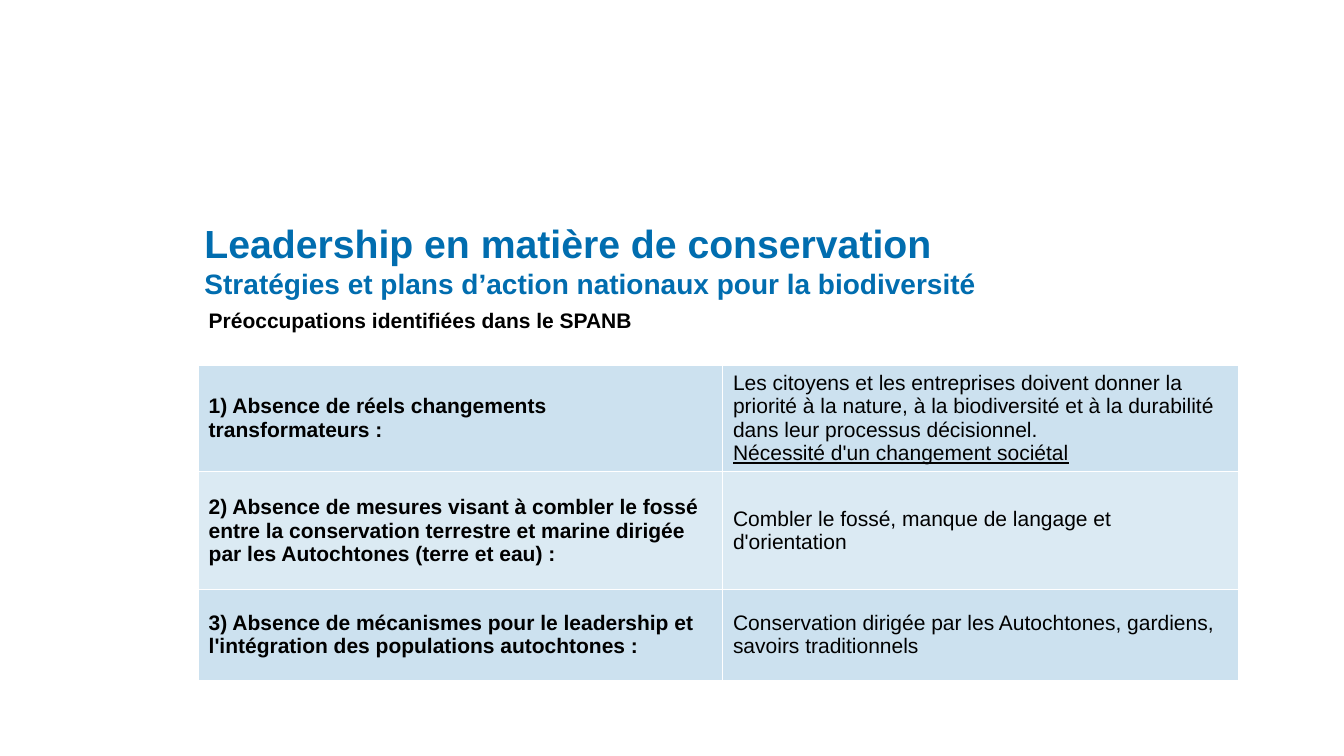
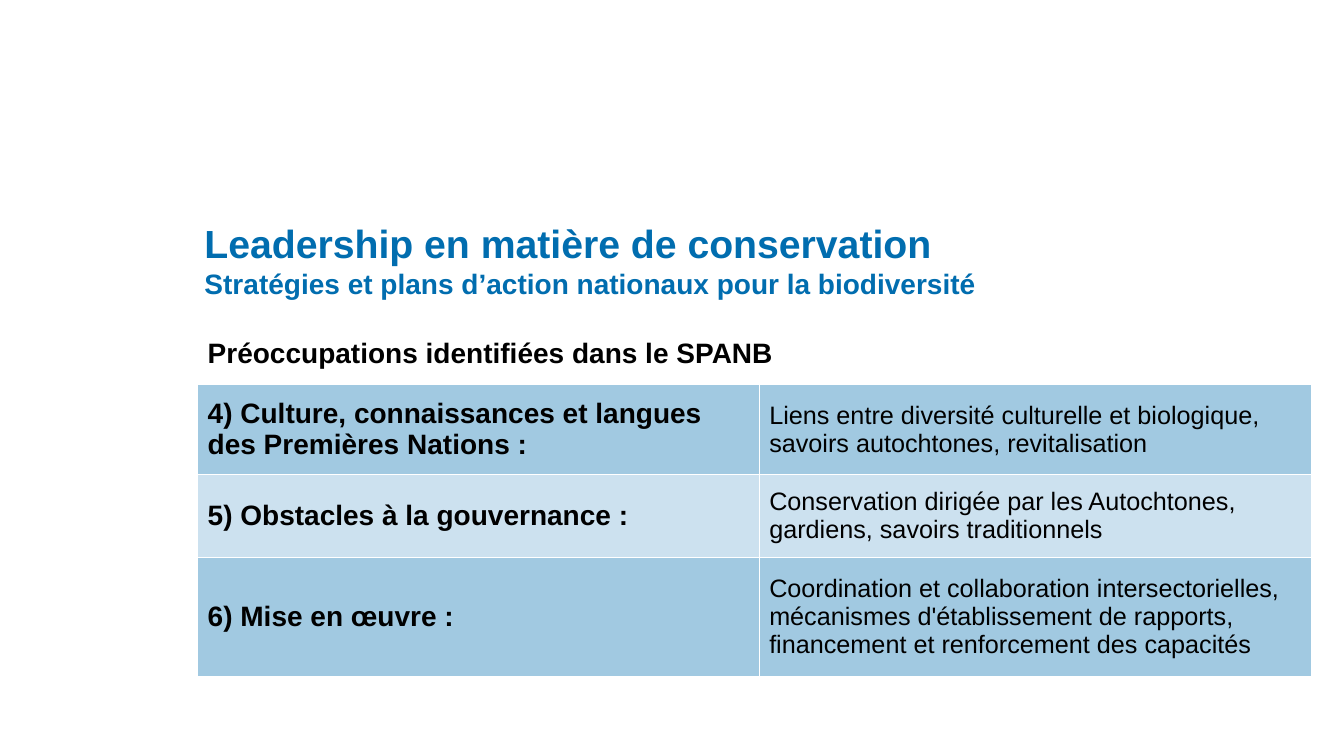
from lxml import etree
from pptx import Presentation
from pptx.dml.color import RGBColor
from pptx.enum import text
from pptx.oxml.ns import qn
from pptx.util import Inches, Pt

FONT = "Arial"
COLOURS = {"blue": "016DAF", "text": "000000", "border": "FFFFFF"}
THIN, THICK = 0.77, 2.33

# Content
TITLE = "Leadership en matière de conservation"
SUBTITLE = "Stratégies et plans d’action nationaux pour la biodiversité"
HEADING = "Préoccupations identifiées dans le SPANB"

# Tints are opacities of the blue, in percent, for odd and even rows
SLIDES = [
    {
        "left": 1.97, "top": 3.02,
        "columns": [5.2, 5.11], "rows": [0.6, 1.06, 1.17, 0.9],
        "concern_size": 15, "response_size": 15, "tints": (20, 14),
        "concerns": [
            ("1) Absence de réels changements transformateurs :",
             ["Les citoyens et les entreprises doivent donner la priorité à la nature, "
              "à la biodiversité et à la durabilité dans leur processus décisionnel.",
              "Nécessité d'un changement sociétal"]),
            ("2) Absence de mesures visant à combler le fossé entre la conservation "
             "terrestre et marine dirigée par les Autochtones (terre et eau) :",
             ["Combler le fossé, manque de langage et d'orientation"]),
            ("3) Absence de mécanismes pour le leadership et l'intégration des "
             "populations autochtones :",
             ["Conservation dirigée par les Autochtones, gardiens, savoirs traditionnels"]),
        ],
    },
    {
        "left": 1.96, "top": 3.3,
        "columns": [5.57, 5.48], "rows": [0.51, 0.9, 0.82, 1.18],
        "concern_size": 20, "response_size": 18, "tints": (37, 20),
        "concerns": [
            ("4) Culture, connaissances et langues des Premières Nations :",
             ["Liens entre diversité culturelle et biologique, savoirs autochtones, "
              "revitalisation"]),
            ("5) Obstacles à la gouvernance :",
             ["Conservation dirigée par les Autochtones, gardiens, savoirs traditionnels"]),
            ("6) Mise en œuvre :",
             ["Coordination et collaboration intersectorielles, mécanismes "
              "d'établissement de rapports, financement et renforcement des capacités"]),
        ],
    },
]


def format_run(run, size, colour, bold):
    run.font.name = FONT
    run.font.size = Pt(size)
    run.font.bold = bold
    run.font.color.rgb = RGBColor.from_string(COLOURS[colour])


def add_title(slide):
    title = slide.shapes.add_textbox(Inches(1.93), Inches(1.85), Inches(11.5), Inches(1.45))
    frame = title.text_frame
    frame.word_wrap = True
    frame.vertical_anchor = text.MSO_ANCHOR.MIDDLE
    frame.text = f"{TITLE}\v{SUBTITLE}"
    for run, size in zip(frame.paragraphs[0].runs, (28, 20)):
        format_run(run, size, "blue", True)


def set_borders(cell, row):
    """White grid, thicker between the heading and the first concern."""
    widths = {"lnL": THIN, "lnR": THIN,
              "lnT": THICK if row == 1 else THIN,
              "lnB": THICK if row == 0 else THIN}
    properties = cell._tc.get_or_add_tcPr()
    for side, width in widths.items():
        line = etree.SubElement(properties, qn(f"a:{side}"), w=str(int(Pt(width))))
        fill = etree.SubElement(line, qn("a:solidFill"))
        etree.SubElement(fill, qn("a:srgbClr"), val=COLOURS["border"])


def set_tint(cell, percent):
    cell.fill.solid()
    cell.fill.fore_color.rgb = RGBColor.from_string(COLOURS["blue"])
    colour = cell._tc.tcPr.find(qn("a:solidFill")).find(qn("a:srgbClr"))
    etree.SubElement(colour, qn("a:alpha"), val=str(percent * 1000))


def write_cell(cell, lines, size, bold):
    cell.text_frame.text = "\n".join(lines)
    for paragraph in cell.text_frame.paragraphs:
        for run in paragraph.runs:
            format_run(run, size, "text", bold)


def add_concerns(slide, content):
    columns, rows = content["columns"], content["rows"]
    table = slide.shapes.add_table(
        len(rows), len(columns), Inches(content["left"]), Inches(content["top"]),
        Inches(sum(columns)), Inches(sum(rows))).table
    table.first_row = table.horz_banding = False
    for column, width in zip(table.columns, columns):
        column.width = Inches(width)
    for row, height in zip(table.rows, rows):
        row.height = Inches(height)

    # Grid and fills
    for r in range(len(rows)):
        for c in range(len(columns)):
            cell = table.cell(r, c)
            set_borders(cell, r)
            if r == 0:
                cell.fill.background()
            else:
                cell.vertical_anchor = text.MSO_ANCHOR.MIDDLE
                set_tint(cell, content["tints"][(r - 1) % 2])

    # Heading, then one concern a row
    table.cell(0, 0).merge(table.cell(0, 1))
    write_cell(table.cell(0, 0), [HEADING], content["concern_size"], True)
    for r, (concern, response) in enumerate(content["concerns"], 1):
        write_cell(table.cell(r, 0), [concern], content["concern_size"], True)
        write_cell(table.cell(r, 1), response, content["response_size"], False)
        # A second line is the underlined conclusion
        for conclusion in table.cell(r, 1).text_frame.paragraphs[1:]:
            conclusion.runs[0].font.underline = True


def main():
    deck = Presentation()
    deck.slide_width, deck.slide_height = Inches(13.33), Inches(7.5)
    for content in SLIDES:
        slide = deck.slides.add_slide(deck.slide_layouts[6])
        add_concerns(slide, content)
        add_title(slide)
    deck.save("out.pptx")


if __name__ == "__main__":
    main()
